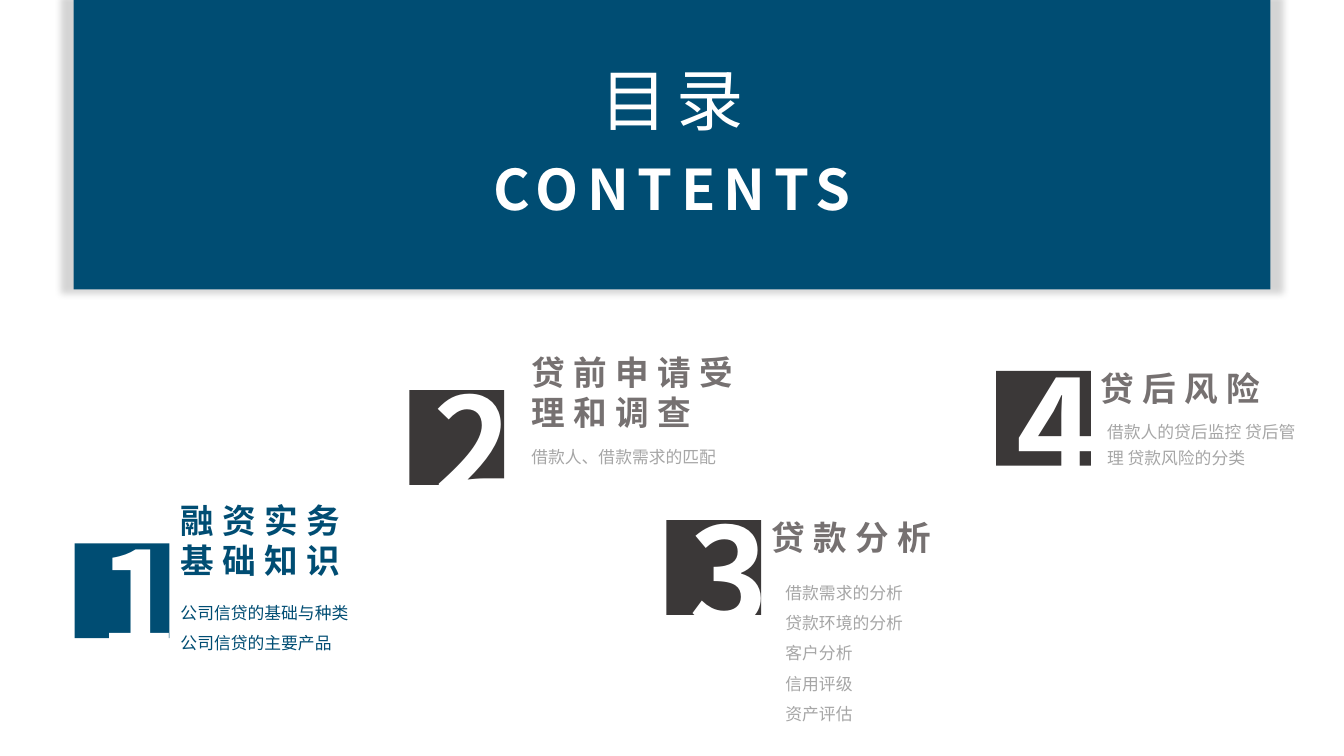
from dataclasses import dataclass

from lxml import etree
from pptx import Presentation
from pptx.dml.color import RGBColor
from pptx.enum.shapes import MSO_SHAPE
from pptx.enum.text import MSO_ANCHOR, MSO_AUTO_SIZE, PP_ALIGN
from pptx.oxml.ns import qn
from pptx.util import Inches, Pt

RECTANGLE = MSO_SHAPE.RECTANGLE
TOP, BOTTOM = MSO_ANCHOR.TOP, MSO_ANCHOR.BOTTOM
LEFT, CENTER = PP_ALIGN.LEFT, PP_ALIGN.CENTER
GROW, FIXED = MSO_AUTO_SIZE.SHAPE_TO_FIT_TEXT, MSO_AUTO_SIZE.NONE
COMPARISON_LAYOUT = 4


@dataclass(frozen=True)
class Theme:
    blue: str = "004D73"
    charcoal: str = "3B3838"
    heading_grey: str = "767171"
    detail_grey: str = "A6A6A6"
    white: str = "FFFFFF"
    title_font: str = "Lato"
    font: str = "Noto Sans CJK SC"
    title_size: int = 48
    subtitle_size: int = 40
    numeral_size: int = 96
    heading_size: int = 24
    detail_size: int = 12
    tracking: int = 6


THEME = Theme()


@dataclass(frozen=True)
class Section:
    tile: tuple
    numeral: tuple
    heading: str
    heading_box: tuple
    details: tuple
    details_box: tuple
    spacing: float
    tile_color: str = THEME.charcoal
    heading_color: str = THEME.heading_grey
    detail_color: str = THEME.detail_grey


SECTIONS = [
    Section((0.74, 5.39), (0.88, 5.06),
            "融资实务基础知识", (1.69, 4.87, 2.12, 0.94),
            ("公司信贷的基础与种类", "公司信贷的主要产品"), (1.69, 5.83, 2.12, 0.67),
            1.5, THEME.blue, THEME.blue, THEME.blue),
    Section((4.06, 3.87), (4.2, 3.53),
            "贷前申请受理和调查", (5.17, 3.44, 2.53, 0.9),
            ("借款人、借款需求的匹配",), (5.17, 4.32, 2.12, 0.36), 1.3),
    Section((6.61, 5.16), (6.74, 4.82),
            "贷款分析", (7.55, 5.16, 2.12, 0.42),
            ("借款需求的分析", "贷款环境的分析", "客户分析", "信用评级", "资产评估"),
            (7.69, 5.63, 2.38, 1.58), 1.5),
    Section((9.88, 3.68), (9.98, 3.35),
            "贷后风险", (10.82, 3.68, 2.12, 0.42),
            ("借款人的贷后监控 贷后管理 贷款风险的分类",), (10.88, 4.07, 2.12, 0.62), 1.3),
]


def place(shape, box):
    shape.left, shape.top, shape.width, shape.height = map(Inches, box)


def write(shape, lines, size, color, font=THEME.font, bold=False, tracking=0,
          align=LEFT, anchor=TOP, spacing=1.0, fit=FIXED):
    frame = shape.text_frame
    frame.text = "\n".join(lines)
    frame.word_wrap = True
    frame.auto_size = fit
    frame.vertical_anchor = anchor
    for paragraph in frame.paragraphs:
        paragraph.alignment = align
        paragraph.line_spacing = spacing
        paragraph.space_before = paragraph.space_after = Pt(0)
        properties = paragraph._p.get_or_add_pPr()
        properties.set("marL", "0")
        properties.set("indent", "0")
        etree.SubElement(properties, qn("a:buNone"))
        for run in paragraph.runs:
            run.font.size = Pt(size)
            run.font.bold = bold
            run.font.name = font
            run.font.color.rgb = RGBColor.from_string(color)
            run_properties = run._r.get_or_add_rPr()
            run_properties.set("spc", str(tracking * 100))
            east_asian = etree.SubElement(run_properties, qn("a:ea"))
            east_asian.set("typeface", font)


def add_block(shapes, box, color):
    block = shapes.add_shape(RECTANGLE, *map(Inches, box))
    block.shadow.inherit = False
    block.fill.solid()
    block.fill.fore_color.rgb = RGBColor.from_string(color)
    block.line.fill.background()
    return block


def add_label(shapes, box, text, size, color, **style):
    label = shapes.add_textbox(*map(Inches, box))
    write(label, [text], size, color, bold=True, **style)


def add_glow_shadow(block):
    effects = block._element.spPr.find(qn("a:effectLst"))
    shadow = etree.SubElement(effects, qn("a:outerShdw"), blurRad=str(Pt(5)),
                              sx="102000", sy="102000", algn="ctr", rotWithShape="0")
    color = etree.SubElement(shadow, qn("a:srgbClr"), val="000000")
    etree.SubElement(color, qn("a:alpha"), val="16000")


def bring_to_front(slide, shape):
    slide.shapes._spTree.append(shape._element)


def add_banner(slide):
    banner = add_block(slide.shapes, (0.73, -0.01, 11.87, 2.88), THEME.blue)
    add_glow_shadow(banner)
    add_label(slide.shapes, (0.73, 1.29, 11.87, 0.96), "CONTENTS", THEME.subtitle_size,
              THEME.white, tracking=THEME.tracking, align=CENTER, anchor=BOTTOM)
    title = slide.shapes.title
    place(title, (0.73, 0.47, 11.87, 0.96))
    write(title, ["目录"], THEME.title_size, THEME.white, font=THEME.title_font,
          tracking=THEME.tracking, align=CENTER, anchor=BOTTOM)
    bring_to_front(slide, title)


def add_section(slide, number, section):
    shapes = slide.shapes.add_group_shape().shapes
    add_block(shapes, (*section.tile, 0.94, 0.94), section.tile_color)
    add_label(shapes, (*section.numeral, 0.95, 1.72), str(number),
              THEME.numeral_size, THEME.white)
    add_label(shapes, section.heading_box, section.heading, THEME.heading_size,
              section.heading_color, tracking=THEME.tracking, anchor=BOTTOM)


def fill_details(slide, number, section):
    details = slide.placeholders[number]
    place(details, section.details_box)
    write(details, section.details, THEME.detail_size, section.detail_color,
          spacing=section.spacing, fit=GROW)
    bring_to_front(slide, details)


def main():
    deck = Presentation()
    deck.slide_width, deck.slide_height = Inches(13.33), Inches(7.5)
    slide = deck.slides.add_slide(deck.slide_layouts[COMPARISON_LAYOUT])
    add_banner(slide)
    for number, section in enumerate(SECTIONS, 1):
        add_section(slide, number, section)
    for number, section in enumerate(SECTIONS, 1):
        fill_details(slide, number, section)
    deck.save("out.pptx")


if __name__ == "__main__":
    main()
